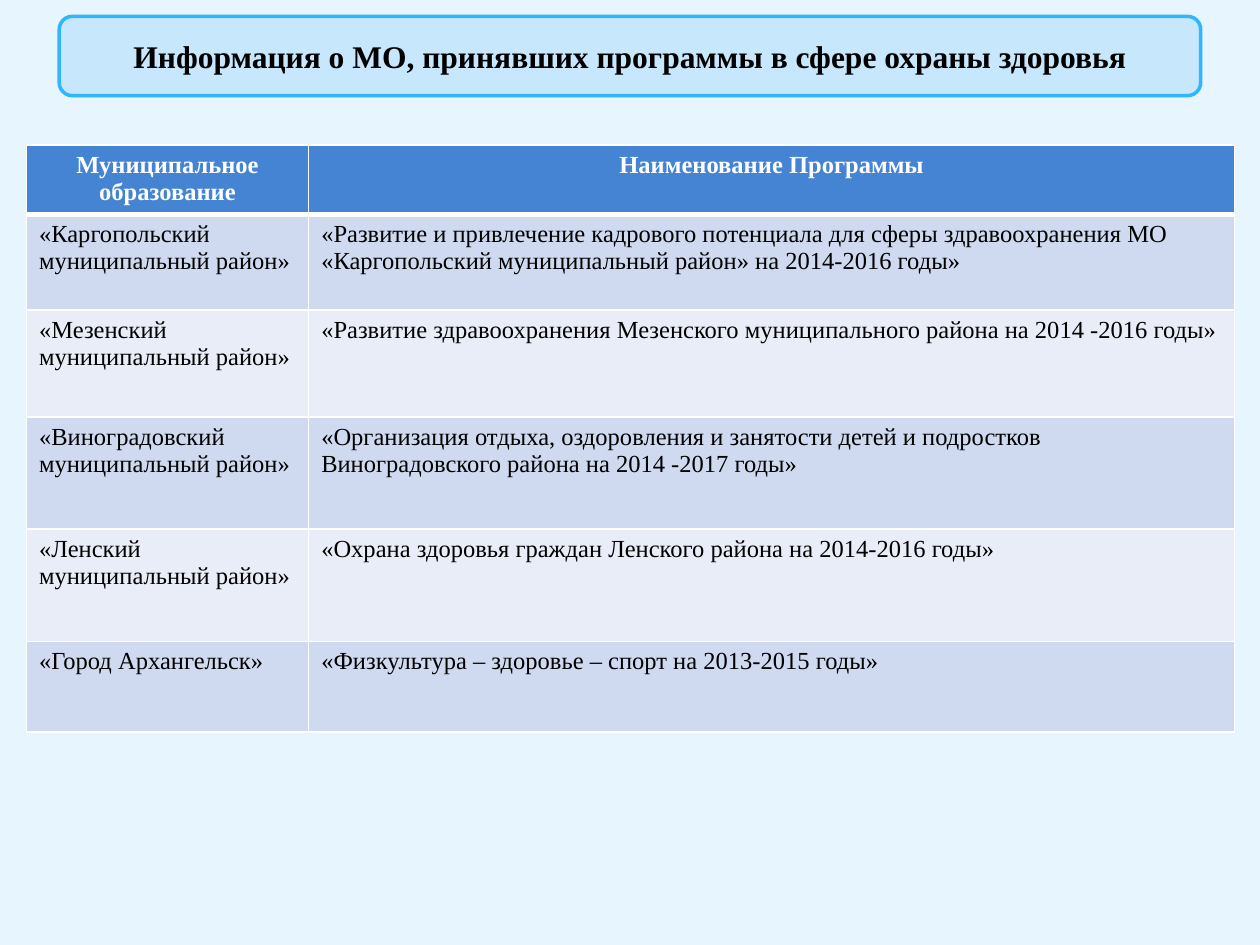
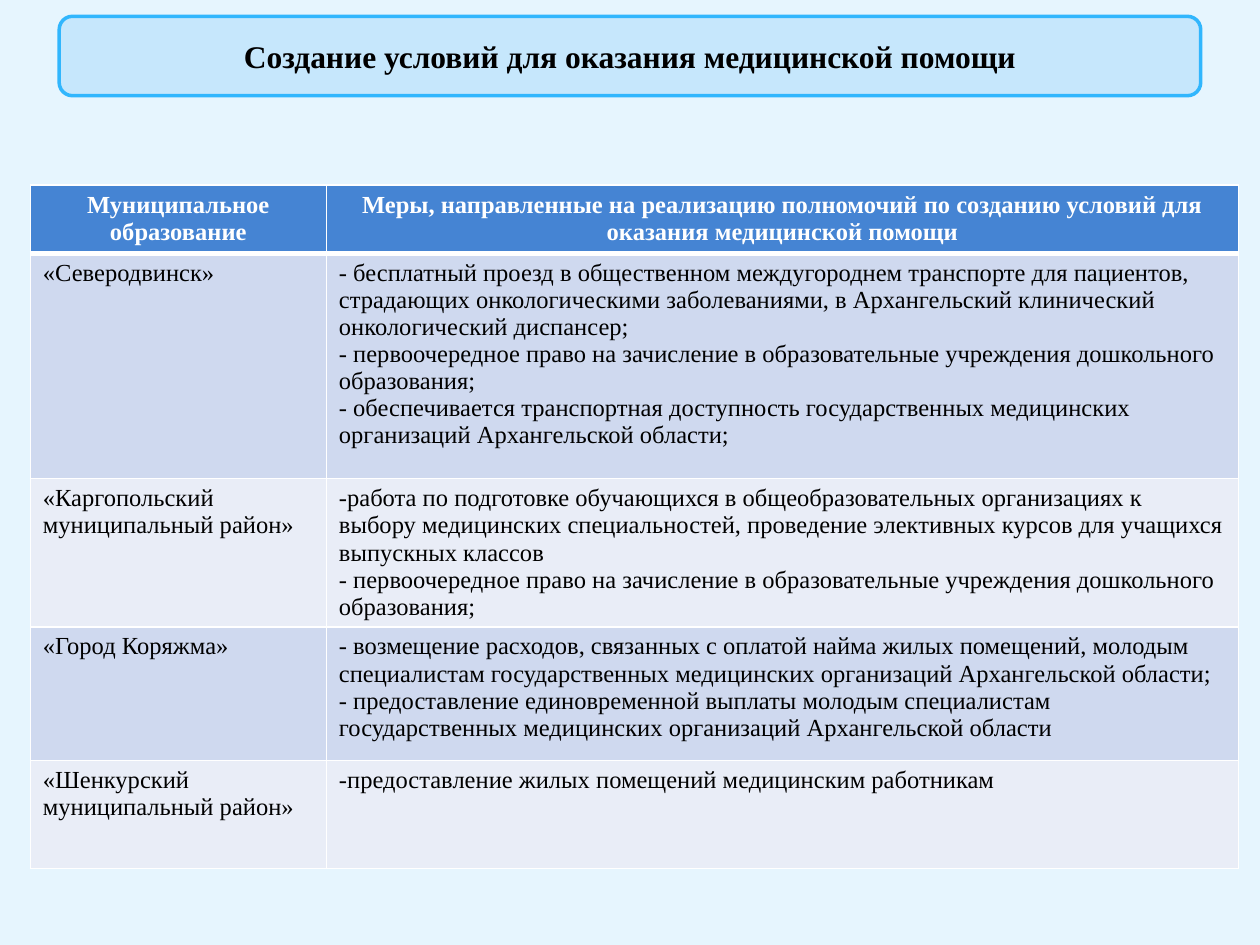
from lxml.etree import SubElement
from pptx import Presentation
from pptx.dml.color import RGBColor
from pptx.enum.shapes import MSO_SHAPE as Shape
from pptx.enum.text import MSO_ANCHOR as Anchor, PP_ALIGN as Align
from pptx.oxml.ns import qn
from pptx.util import Inches, Pt

FONT = "Times New Roman"
BACKGROUND = "E6F5FE"
TITLE_FILL, TITLE_LINE = "C6E7FC", "31B6FD"
HEADER_FILL, BAND_FILLS = "4584D3", ("CFD9EF", "E9EDF7")
WHITE, BLACK = "FFFFFF", "000000"

TITLE_FORMAT = {"size": Pt(18), "bold": True, "name": FONT}
HEADER_FORMAT = {"size": Pt(14), "bold": True, "name": FONT}
BODY_FORMAT = {"size": Pt(14), "bold": False, "name": FONT}

PRIORITY = ("- первоочередное право на зачисление в образовательные "
            "учреждения дошкольного образования;")

# Places and sizes are counted in grid columns and rows
SLIDES = [
    {
        "title": "Информация о МО, принявших программы в сфере охраны здоровья",
        "corner": (2.1, 11.5),
        "columns": (22.4, 73.5),
        "rows": (5.5, 7.6, 8.5, 8.9, 8.9, 7.2),
        "cells": [
            ("Муниципальное образование", "Наименование Программы"),
            ("«Каргопольский муниципальный район»",
             "«Развитие и привлечение кадрового потенциала для сферы здравоохранения МО "
             "«Каргопольский муниципальный район» на 2014-2016 годы»"),
            ("«Мезенский муниципальный район»",
             "«Развитие здравоохранения Мезенского муниципального района на 2014 -2016 годы»"),
            ("«Виноградовский муниципальный район»",
             "«Организация отдыха, оздоровления и занятости детей и подростков "
             "Виноградовского района на 2014 -2017 годы»"),
            ("«Ленский муниципальный район»",
             "«Охрана здоровья граждан Ленского района на 2014-2016 годы»"),
            ("«Город Архангельск»",
             "«Физкультура – здоровье – спорт на 2013-2015 годы»"),
        ],
    },
    {
        "title": "Создание условий для оказания медицинской помощи",
        "corner": (2.4, 14.7),
        "columns": (23.5, 72.4),
        "rows": (5.4, 17.9, 11.7, 10.6, 8.6),
        "cells": [
            ("Муниципальное образование",
             "Меры, направленные на реализацию полномочий по созданию условий "
             "для оказания медицинской помощи"),
            ("«Северодвинск»",
             "- бесплатный проезд в общественном междугороднем транспорте для пациентов, "
             "страдающих онкологическими заболеваниями, в Архангельский клинический "
             "онкологический диспансер;\n"
             + PRIORITY +
             "\n- обеспечивается транспортная доступность государственных медицинских "
             "организаций Архангельской области;"),
            ("«Каргопольский муниципальный район»",
             "-работа по подготовке обучающихся в общеобразовательных организациях к выбору "
             "медицинских специальностей, проведение элективных курсов для учащихся "
             "выпускных классов\n" + PRIORITY),
            ("«Город Коряжма»",
             "- возмещение расходов, связанных с оплатой найма жилых помещений, молодым "
             "специалистам государственных медицинских организаций Архангельской области;\n"
             "- предоставление единовременной выплаты молодым специалистам "
             "государственных медицинских организаций Архангельской области"),
            ("«Шенкурский муниципальный район»",
             "-предоставление жилых помещений медицинским работникам"),
        ],
    },
]


def paint(color_format, color):
    """Give a fill, line or font the colour written as a hex string."""
    if hasattr(color_format, "solid"):
        color_format.solid()
        color_format = color_format.fore_color
    elif hasattr(color_format, "color"):
        color_format = color_format.color
    color_format.rgb = RGBColor.from_string(color)


def write(text_frame, text, font_format, color, alignment):
    """Fill a text frame, one paragraph per line, in one format."""
    text_frame.text = text
    for paragraph in text_frame.paragraphs:
        paragraph.alignment = alignment
        for run in paragraph.runs:
            for attribute, value in font_format.items():
                setattr(run.font, attribute, value)
            paint(run.font, color)


presentation = Presentation()
presentation.slide_width, presentation.slide_height = Inches(10), Inches(7.5)
COLUMN = presentation.slide_width / 100
ROW = presentation.slide_height / 75
paint(presentation.slide_master.background.fill, BACKGROUND)

for content in SLIDES:
    slide = presentation.slides.add_slide(presentation.slide_layouts[6])

    # Table on the grid
    left, top = content["corner"]
    widths, heights = content["columns"], content["rows"]
    table = slide.shapes.add_table(
        len(heights), len(widths), int(left * COLUMN), int(top * ROW),
        int(sum(widths) * COLUMN), int(sum(heights) * ROW)).table
    for column, width in zip(table.columns, widths):
        column.width = int(width * COLUMN)
    for row, height in zip(table.rows, heights):
        row.height = int(height * ROW)

    # Cells: a header row, then two alternating bands
    for row_index, texts in enumerate(content["cells"]):
        is_header = row_index == 0
        for column_index, text in enumerate(texts):
            cell = table.cell(row_index, column_index)
            if is_header:
                write(cell.text_frame, text, HEADER_FORMAT, WHITE, Align.CENTER)
            else:
                write(cell.text_frame, text, BODY_FORMAT, BLACK, Align.LEFT)

            # White borders, thicker between the header and the body
            properties = cell._tc.get_or_add_tcPr()
            for side in "LRTB":
                thick = (is_header and side == "B") or (row_index == 1 and side == "T")
                border = SubElement(properties, qn(f"a:ln{side}"), w=str(Pt(3 if thick else 1)))
                fill = SubElement(border, qn("a:solidFill"))
                SubElement(fill, qn("a:srgbClr"), val=WHITE)
            paint(cell.fill, HEADER_FILL if is_header else BAND_FILLS[(row_index - 1) % 2])

    # Title band
    band = slide.shapes.add_shape(
        Shape.ROUNDED_RECTANGLE, int(4.7 * COLUMN), int(1.3 * ROW),
        int(90.6 * COLUMN), int(6.3 * ROW))
    band.shadow.inherit = False
    paint(band.fill, TITLE_FILL)
    paint(band.line, TITLE_LINE)
    band.line.width = Pt(2)
    band.text_frame.word_wrap = True
    band.text_frame.vertical_anchor = Anchor.MIDDLE
    write(band.text_frame, content["title"], TITLE_FORMAT, BLACK, Align.CENTER)

presentation.save("out.pptx")
